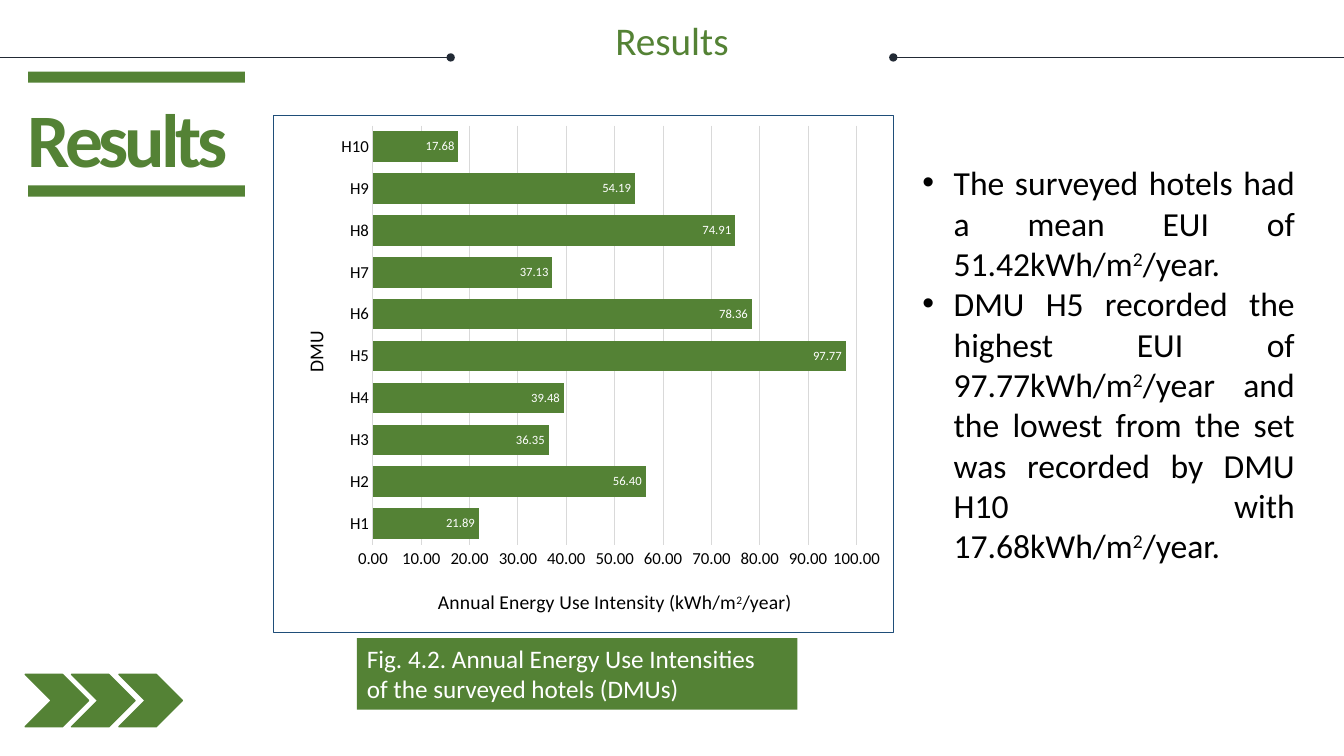
from dataclasses import dataclass
from typing import Any

from lxml import etree
from pptx import Presentation
from pptx.chart.data import CategoryChartData
from pptx.dml.color import RGBColor
from pptx.enum.chart import XL_CHART_TYPE, XL_LABEL_POSITION, XL_TICK_MARK
from pptx.enum.shapes import MSO_CONNECTOR, MSO_SHAPE
from pptx.enum.text import MSO_ANCHOR, PP_ALIGN
from pptx.oxml import parse_xml
from pptx.oxml.ns import nsdecls, qn
from pptx.util import Emu, Pt

PX = 9144  # EMU per px, 100 px to the inch
RECT, CHEVRON = MSO_SHAPE.RECTANGLE, MSO_SHAPE.CHEVRON
STRAIGHT = MSO_CONNECTOR.STRAIGHT
BAR_CLUSTERED = XL_CHART_TYPE.BAR_CLUSTERED
INSIDE_END, NO_TICK = XL_LABEL_POSITION.INSIDE_END, XL_TICK_MARK.NONE
LEFT, CENTER, RIGHT, JUSTIFY = PP_ALIGN.LEFT, PP_ALIGN.CENTER, PP_ALIGN.RIGHT, PP_ALIGN.JUSTIFY
TOP, MIDDLE = MSO_ANCHOR.TOP, MSO_ANCHOR.MIDDLE


@dataclass(frozen=True)
class Theme:
    font: str = "Calibri"
    green: str = "548235"
    rule: str = "222A35"
    grid: str = "D9D9D9"
    border: str = "1F4E79"
    black: str = "000000"
    white: str = "FFFFFF"
    heading: int = 54
    title: int = 28
    body: int = 24
    caption: int = 18
    axis_title: int = 14
    tick: int = 12
    label: int = 9


THEME = Theme()


@dataclass(frozen=True)
class Box:
    x: int
    y: int
    w: int
    h: int

    def emu(self) -> tuple[Emu, ...]:
        return tuple(Emu(v * PX) for v in (self.x, self.y, self.w, self.h))


@dataclass(frozen=True)
class Style:
    size: int
    color: str
    bold: bool = False
    align: Any = LEFT
    anchor: Any = TOP
    spacing: float = 1.0
    inset: tuple[int, int] = (10, 5)
    tracking: int = 0
    bulleted: bool = False


@dataclass(frozen=True)
class Rule:
    start: int
    end: int
    dot: str


HOTEL_EUI = {"H1": 21.89, "H2": 56.40, "H3": 36.35, "H4": 39.48, "H5": 97.77,
             "H6": 78.36, "H7": 37.13, "H8": 74.91, "H9": 54.19, "H10": 17.68}
# Text between carets is superscript
FINDINGS = [
    "The surveyed hotels had a mean EUI of 51.42kWh/m^2^/year.",
    "DMU H5 recorded the highest EUI of 97.77kWh/m^2^/year and the lowest from the set "
    "was recorded by DMU H10 with 17.68kWh/m^2^/year.",
]
CAPTION = ["Fig. 4.2. Annual Energy Use Intensities", "of the surveyed hotels (DMUs)"]
RULES = [Rule(886, 1333, "headEnd"), Rule(0, 447, "tailEnd")]


def format_font(font: Any, size: int, color: str, bold: bool = False) -> None:
    for name, value in {"name": THEME.font, "size": Pt(size), "bold": bold}.items():
        setattr(font, name, value)
    font.color.rgb = RGBColor.from_string(color)


def add_runs(paragraph: Any, text: str, style: Style) -> None:
    for i, piece in enumerate(text.split("^")):
        run = paragraph.add_run()
        run.text = piece
        format_font(run.font, style.size, style.color, style.bold)
        properties = run._r.get_or_add_rPr()
        if i % 2:
            properties.set("baseline", "30000")
        if style.tracking:
            properties.set("spc", str(style.tracking))


def write(frame: Any, lines: list[str], style: Style) -> None:
    across, down = (Emu(v * PX) for v in style.inset)
    values = {"word_wrap": True, "vertical_anchor": style.anchor, "margin_left": across,
              "margin_right": across, "margin_top": down, "margin_bottom": down}
    for name, value in values.items():
        setattr(frame, name, value)
    for i, line in enumerate(lines):
        paragraph = frame.add_paragraph() if i else frame.paragraphs[0]
        paragraph.alignment, paragraph.line_spacing = style.align, style.spacing
        if style.bulleted:
            properties = paragraph._p.get_or_add_pPr()
            properties.set("marL", str(31 * PX))
            properties.set("indent", str(-31 * PX))
            etree.SubElement(properties, qn("a:buFont")).set("typeface", "Arial")
            etree.SubElement(properties, qn("a:buChar")).set("char", "•")
        add_runs(paragraph, line, style)


def add_block(slide: Any, kind: Any, box: Box, fill: str, outlined: bool = False) -> Any:
    block = slide.shapes.add_shape(kind, *box.emu())
    block.shadow.inherit = False
    block.fill.solid()
    block.fill.fore_color.rgb = RGBColor.from_string(fill)
    if outlined:
        block.line.color.rgb = RGBColor.from_string(fill)
        block.line.width = Pt(1)
    else:
        block.line.fill.background()
    return block


def add_rule(slide: Any, rule: Rule) -> None:
    line = slide.shapes.add_connector(
        STRAIGHT, *(Emu(v * PX) for v in (rule.start, 57, rule.end, 57)))
    line.line.color.rgb = RGBColor.from_string(THEME.rule)
    line.line.width = Pt(0.5)
    etree.SubElement(line.line._get_or_add_ln(), qn(f"a:{rule.dot}")).set("type", "oval")
    etree.SubElement(line._element.spPr, qn("a:effectLst"))


def set_layout(parent: Any, index: int, **places: float) -> None:
    """Place a chart part by fractions of the chart area."""
    for old in parent.findall(qn("c:layout")):
        parent.remove(old)
    target = '<c:layoutTarget val="inner"/>' if "w" in places else ""
    modes = "".join(f'<c:{k}Mode val="edge"/>' for k in places if k in "xy")
    values = "".join(f'<c:{k} val="{v}"/>' for k, v in places.items())
    parent.insert(index, parse_xml(
        f'<c:layout {nsdecls("c")}><c:manualLayout>{target}{modes}{values}'
        "</c:manualLayout></c:layout>"))


def format_axis(axis: Any, title: str, rotation: int, x: float, y: float) -> None:
    axis.major_tick_mark = axis.minor_tick_mark = NO_TICK
    format_font(axis.tick_labels.font, THEME.tick, THEME.black)
    axis.has_title = True
    add_runs(axis.axis_title.text_frame.paragraphs[0], title,
             Style(THEME.axis_title, THEME.black))
    element = axis.axis_title.element
    body = element.find(".//" + qn("a:bodyPr"))
    body.set("rot", str(rotation))
    body.set("vert", "horz")
    set_layout(element, 1, x=x, y=y)


def add_eui_chart(slide: Any, box: Box) -> None:
    data = CategoryChartData(number_format="0.00")
    data.categories = list(HOTEL_EUI)
    data.add_series("Series 1", list(HOTEL_EUI.values()))
    chart = slide.shapes.add_chart(BAR_CLUSTERED, *box.emu(), data).chart
    chart.has_legend = chart.has_title = False
    format_font(chart.font, 10, THEME.black)
    chart.element.find(qn("c:chart")).addnext(parse_xml(
        f'<c:spPr {nsdecls("c", "a")}><a:noFill/><a:ln w="9525"><a:solidFill>'
        f'<a:srgbClr val="{THEME.border}"/></a:solidFill></a:ln></c:spPr>'))
    set_layout(chart.element.find(".//" + qn("c:plotArea")), 0, x=0.16, y=0.02, w=0.78, h=0.81)

    # Axes
    hotels, eui = chart.category_axis, chart.value_axis
    format_axis(hotels, "DMU", -5400000, 0.04, 0.41)
    format_axis(eui, "Annual Energy Use Intensity (kWh/m^2^/year)", 0, 0.26, 0.91)
    for name, value in {"minimum_scale": 0, "maximum_scale": 100, "major_unit": 10,
                        "has_major_gridlines": True}.items():
        setattr(eui, name, value)
    eui.tick_labels.number_format = "0.00"
    eui.tick_labels.number_format_is_linked = False
    eui.format.line.fill.background()
    for line in (hotels.format.line, eui.major_gridlines.format.line):
        line.color.rgb = RGBColor.from_string(THEME.grid)
        line.width = Pt(0.75)

    # Bars and their values
    plot = chart.plots[0]
    plot.gap_width, plot.vary_by_categories, plot.has_data_labels = 37, False, True
    plot.series[0].format.fill.solid()
    plot.series[0].format.fill.fore_color.rgb = RGBColor.from_string(THEME.green)
    for name, value in {"show_value": True, "position": INSIDE_END, "number_format": "0.00",
                        "number_format_is_linked": False}.items():
        setattr(plot.data_labels, name, value)
    format_font(plot.data_labels.font, THEME.label, THEME.white)


def main() -> None:
    deck = Presentation()
    deck.slide_width, deck.slide_height = Emu(1333 * PX), Emu(750 * PX)
    slide = deck.slides.add_slide(deck.slide_layouts[6])

    # Chevrons and header
    for i in range(3):
        add_block(slide, CHEVRON, Box(25 + round(46.5 * i), 669, 63, 52), THEME.green, True)
    for rule in RULES:
        add_rule(slide, rule)
    title = slide.shapes.add_textbox(*Box(25, 21, 1283, 85).emu())
    write(title.text_frame, ["Results"],
          Style(THEME.title, THEME.green, align=CENTER, spacing=0.9, inset=(0, 0)))

    # Side heading between two bars
    heading = add_block(slide, RECT, Box(1, 93, 245, 108), THEME.white)
    write(heading.text_frame, ["Results"],
          Style(THEME.heading, THEME.green, bold=True, align=RIGHT, anchor=MIDDLE,
                spacing=0.7, inset=(20, 20), tracking=-300))
    for top in (71, 184):
        add_block(slide, RECT, Box(28, top, 215, 11), THEME.green)

    # Chart, caption and findings
    add_eui_chart(slide, Box(271, 114, 616, 514))
    caption = add_block(slide, RECT, Box(354, 633, 437, 71), THEME.green)
    write(caption.text_frame, CAPTION, Style(THEME.caption, THEME.white))
    findings = slide.shapes.add_textbox(*Box(905, 156, 389, 414).emu())
    write(findings.text_frame, FINDINGS,
          Style(THEME.body, THEME.black, align=JUSTIFY, bulleted=True))

    deck.save("out.pptx")


if __name__ == "__main__":
    main()
